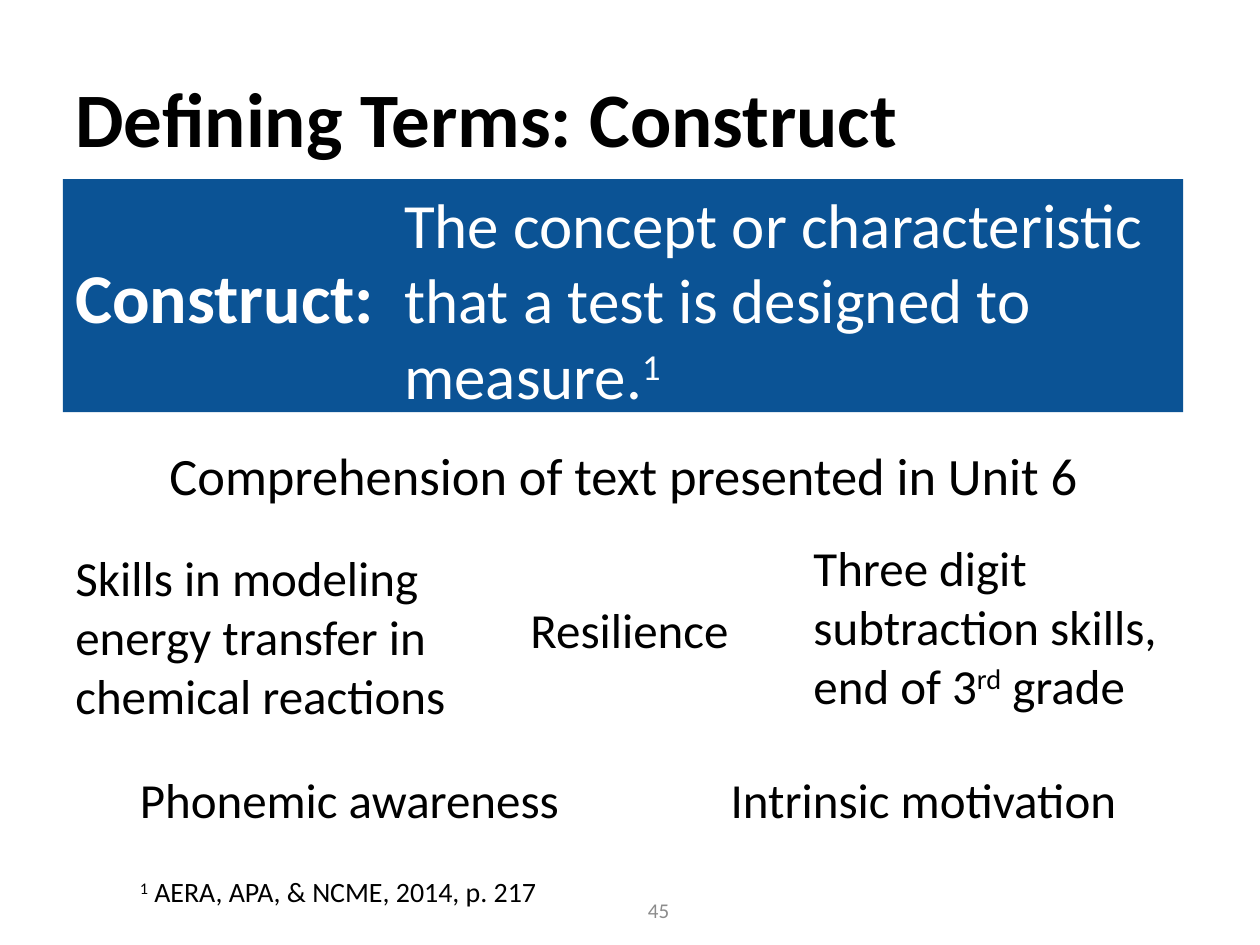
from dataclasses import dataclass

from pptx import Presentation
from pptx.dml.color import RGBColor
from pptx.enum.shapes import MSO_SHAPE
from pptx.enum.text import MSO_ANCHOR as Anchor, PP_ALIGN as Align
from pptx.util import Cm, Pt


@dataclass(frozen=True)
class Theme:
    font: str = "Calibri"
    ink: str = "000000"
    paper: str = "FFFFFF"
    blue: str = "0B5395"
    grey: str = "8C8C8C"
    title: int = 44
    term: int = 40
    definition: int = 36
    lead: int = 30
    body: int = 28
    note: int = 16
    number: int = 12


T = Theme()
SUPERSCRIPT = "30000"


def write(p, text, size=T.body, color=T.ink, bold=False, align=Align.LEFT, before=0):
    """Fill a paragraph; parts between ^ marks are superscript."""
    p.alignment = align
    p.space_before = Pt(before)
    for i, part in enumerate(text.split("^")):
        if not part:
            continue
        r = p.add_run()
        r.text = part
        r.font.name, r.font.size, r.font.bold = T.font, Pt(size), bold
        r.font.color.rgb = RGBColor.from_string(color)
        if i % 2:
            r.font._element.set("baseline", SUPERSCRIPT)


def add_text(s, box, text, fill=None, anchor=Anchor.TOP, **style):
    """Place text in a box given in cm, on a filled rectangle if fill is set."""
    place = [Cm(v) for v in box]
    if fill:
        sp = s.shapes.add_shape(MSO_SHAPE.RECTANGLE, *place)
        sp.shadow.inherit = False
        sp.fill.solid()
        sp.fill.fore_color.rgb = RGBColor.from_string(fill)
        sp.line.fill.background()
    else:
        sp = s.shapes.add_textbox(*place)
    tf = sp.text_frame
    tf.word_wrap = True
    tf.vertical_anchor = anchor
    write(tf.paragraphs[0], text, **style)
    return tf


def add_title(s, box):
    add_text(s, box, "Defining Terms: Construct", anchor=Anchor.MIDDLE,
             size=T.title, bold=True)


def add_definition(s, box):
    x, y, w, h = box
    term_w = 6.63
    add_text(s, (x, y, term_w, h), "Construct:", fill=T.blue, anchor=Anchor.MIDDLE,
             size=T.term, color=T.paper, bold=True)
    add_text(s, (x + term_w, y, w - term_w, h),
             "The concept or characteristic that a test is designed to measure.^1^",
             fill=T.blue, size=T.definition, color=T.paper)


def add_examples(s, box):
    x, y, w, h = box
    column_w = 7.98

    # Lead example across the full width
    add_text(s, (x, y, w, 2.54), "Comprehension of text presented in Unit 6",
             size=T.lead, align=Align.CENTER)

    # Three examples side by side
    add_text(s, (x, y + 2.11, column_w, 3.89),
             "Skills in modeling energy transfer in chemical reactions")
    add_text(s, (x + 8.46, y + 3.15, 5.92, 2.36), "Resilience",
             fill=T.paper, align=Align.CENTER)
    add_text(s, (x + 14.88, y + 1.91, column_w, 3.94),
             "Three digit subtraction skills, end of 3^rd^ grade")

    # Bottom pair, with the source note under the left one
    bottom = 6.58
    add_text(s, (x + 13.21, y + bottom, 10.36, h - bottom), "Intrinsic motivation")
    tf = add_text(s, (x + 1.3, y + bottom, 10.01, h - bottom), "Phonemic awareness")
    write(tf.add_paragraph(), "^1^ AERA, APA, & NCME, 2014, p. 217",
          size=T.note, before=26.5)


def add_number(s, box):
    add_text(s, box, "45", anchor=Anchor.MIDDLE, size=T.number, color=T.grey,
             align=Align.RIGHT)


def main():
    prs = Presentation()
    prs.slide_width, prs.slide_height = Cm(25.4), Cm(19.05)
    s = prs.slides.add_slide(prs.slide_layouts[6])
    left = 1.27
    add_title(s, (left, 0.76, 22.86, 3.18))
    add_definition(s, (left, 3.61, 22.58, 4.7))
    add_examples(s, (left, 8.81, 22.61, 10.02))
    add_number(s, (7.82, 17.83, 5.92, 1.02))
    prs.save("out.pptx")


if __name__ == "__main__":
    main()
